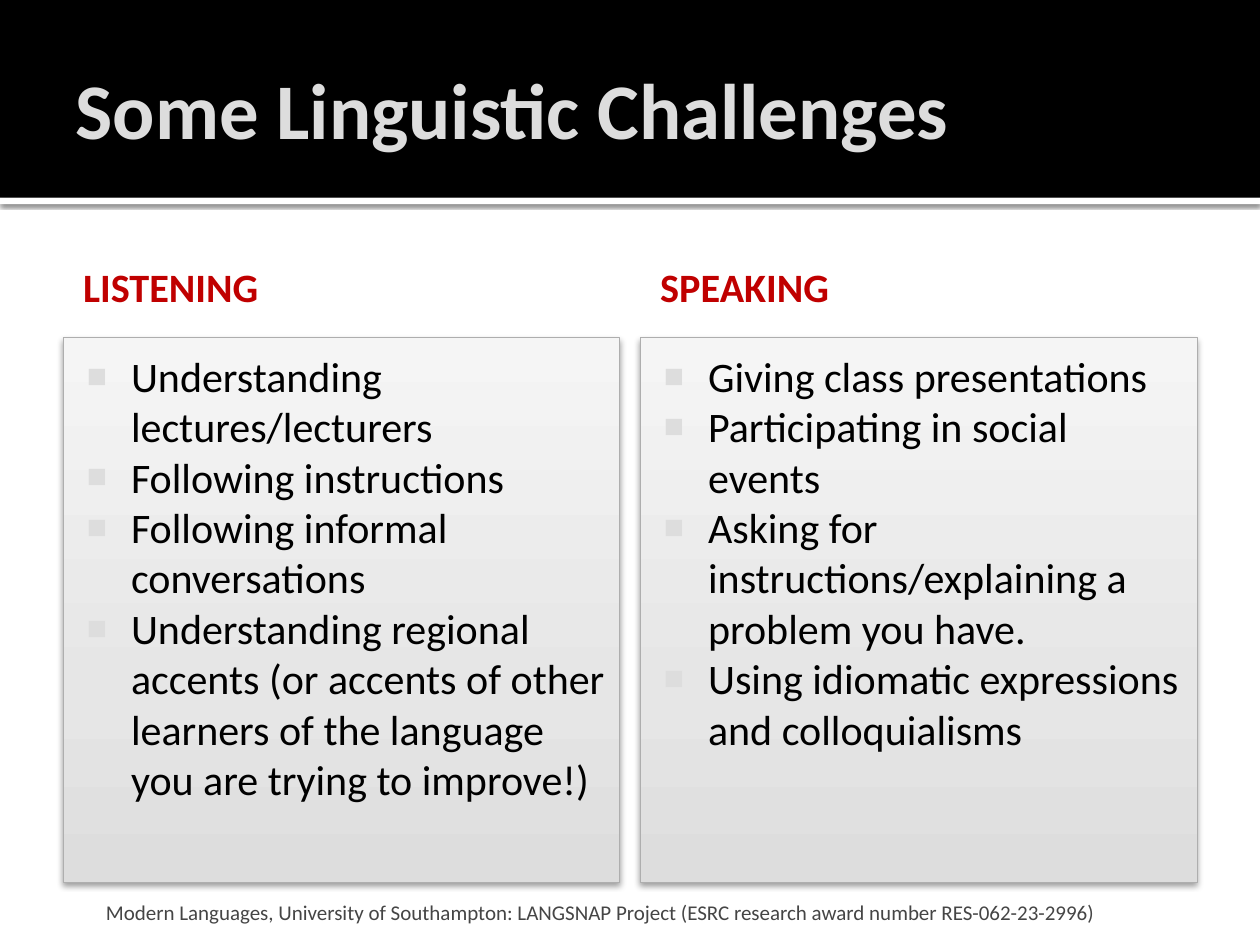
"""Build the slide on listening and speaking challenges for language learners."""
from dataclasses import dataclass

from pptx import Presentation, oxml, util as u
from pptx.dml.color import RGBColor
from pptx.enum import shapes, text
from pptx.oxml.ns import nsdecls, qn

WIDTH, HEIGHT = 10, 7.5
MARGIN, COLUMN, GUTTER = 0.5, 4.42, 0.16
HEADING_TOP, HEADING_HEIGHT = 1.86, 0.78
PANEL_TOP, PANEL_HEIGHT = 2.68, 4.32
BAND = 1.57
COLOURS = {
    "band": "000000", "rule": "FFFFFF", "title": "DDDDDD", "heading": "C00000",
    "body": "000000", "bullet": "DDDDDD", "edge": "AEAEAE", "footer": "454545",
}
PANEL_STOPS = {0: "DDDDDD", 35: "E6E6E6", 100: "F5F5F5"}


@dataclass(frozen=True)
class Style:
    size: float
    colour: str
    bold: bool
    anchor: text.MSO_ANCHOR
    insets: tuple[float, float, float, float]


@dataclass(frozen=True)
class Skill:
    heading: str
    challenges: tuple[str, ...]


STYLES = {
    "title": Style(45, "title", True, text.MSO_ANCHOR.MIDDLE, (0.1, 0.05, 0.05, 0.05)),
    "heading": Style(23, "heading", True, text.MSO_ANCHOR.MIDDLE, (0.16, 0.1, 0.1, 0.05)),
    "body": Style(24, "body", False, text.MSO_ANCHOR.TOP, (0.06, 0.1, 0.1, 0.05)),
    "footer": Style(12, "footer", False, text.MSO_ANCHOR.BOTTOM, (0.05, 0.05, 0.05, 0)),
}
SKILLS = (
    Skill("LISTENING", (
        "Understanding lectures/lecturers",
        "Following instructions",
        "Following informal conversations",
        "Understanding regional accents (or accents of other learners of the "
        "language you are trying to improve!)",
    )),
    Skill("SPEAKING", (
        "Giving class presentations",
        "Participating in social events",
        "Asking for instructions/explaining a problem you have.",
        "Using idiomatic expressions and colloquialisms",
    )),
)
FOOTER = ("Modern Languages, University of Southampton: LANGSNAP Project "
          "(ESRC research award number RES-062-23-2996)")


def rgb(name: str) -> RGBColor:
    """Look up a named colour."""
    return RGBColor.from_string(COLOURS[name])


def assign(target, values: dict) -> None:
    """Set every attribute named in values."""
    for name, value in values.items():
        setattr(target, name, value)


def place(part, left: float, top: float, width: float, height: float) -> None:
    """Position a part in inches."""
    assign(part, {"left": u.Inches(left), "top": u.Inches(top),
                  "width": u.Inches(width), "height": u.Inches(height)})


def write(part, lines: tuple[str, ...], style: Style) -> None:
    """Fill a part with one formatted paragraph per line."""
    frame = part.text_frame
    frame.text = "\n".join(lines)
    sides = ("margin_left", "margin_top", "margin_right", "margin_bottom")
    assign(frame, {"word_wrap": True, "auto_size": text.MSO_AUTO_SIZE.NONE,
                   "vertical_anchor": style.anchor,
                   **{side: u.Inches(inset) for side, inset in zip(sides, style.insets)}})
    for paragraph in frame.paragraphs:
        assign(paragraph, {"alignment": text.PP_ALIGN.LEFT, "space_before": u.Pt(0)})
        for run in paragraph.runs:
            assign(run.font, {"name": "Calibri", "size": u.Pt(style.size), "bold": style.bold})
            run.font.color.rgb = rgb(style.colour)


def add_bullets(part) -> None:
    """Give each paragraph a small square bullet and a hanging indent."""
    for paragraph in part.text_frame.paragraphs:
        props = paragraph._p.get_or_add_pPr()
        props.set("marL", str(u.Inches(0.48)))
        props.set("indent", str(u.Inches(-0.35)))
        for markup in (f'<a:buClr {nsdecls("a")}><a:srgbClr val="{COLOURS["bullet"]}"/></a:buClr>',
                       f'<a:buSzPct {nsdecls("a")} val="80000"/>',
                       f'<a:buFont {nsdecls("a")} typeface="Arial"/>',
                       f'<a:buChar {nsdecls("a")} char="■"/>'):
            props.append(oxml.parse_xml(markup))


def add_shadow(part, opacity: int, blur: float, distance: float) -> None:
    """Cast a black shadow straight down."""
    part.shadow.inherit = False
    effects = part._element.spPr.find(qn("a:effectLst"))
    effects.append(oxml.parse_xml(
        f'<a:outerShdw {nsdecls("a")} blurRad="{u.Pt(blur)}" dist="{u.Pt(distance)}" '
        f'dir="5400000" algn="t" rotWithShape="0"><a:srgbClr val="000000">'
        f'<a:alpha val="{opacity * 1000}"/></a:srgbClr></a:outerShdw>'))


def style_panel(part) -> None:
    """Shade a list panel from grey at the foot to near white at the top."""
    stops = "".join(f'<a:gs pos="{share * 1000}"><a:srgbClr val="{colour}"/></a:gs>'
                    for share, colour in PANEL_STOPS.items())
    part._element.spPr.append(oxml.parse_xml(
        f'<a:gradFill {nsdecls("a")} rotWithShape="1"><a:gsLst>{stops}</a:gsLst>'
        f'<a:lin ang="16200000" scaled="0"/></a:gradFill>'))
    part.line.color.rgb = rgb("edge")
    part.line.width = u.Pt(0.5)
    add_shadow(part, 38, 3.5, 2)


def add_bar(slide, layer: int, top: float, height: float, colour: str):
    """Add a full-width bar behind the placeholders."""
    bar = slide.shapes.add_shape(shapes.MSO_SHAPE.RECTANGLE, 0, 0, 0, 0)
    place(bar, 0, top, WIDTH, height)
    bar.fill.solid()
    bar.fill.fore_color.rgb = rgb(colour)
    bar.line.fill.background()
    bar.shadow.inherit = False
    slide.shapes._spTree.insert(2 + layer, bar._element)
    return bar


def add_skill(slide, column: int, skill: Skill) -> None:
    """Fill one column with its heading and its list of challenges."""
    left = MARGIN + column * (COLUMN + GUTTER)
    heading, panel = (slide.placeholders[2 * column + offset] for offset in (1, 2))
    place(heading, left, HEADING_TOP, COLUMN, HEADING_HEIGHT)
    write(heading, (skill.heading,), STYLES["heading"])
    place(panel, left, PANEL_TOP, COLUMN, PANEL_HEIGHT)
    write(panel, skill.challenges, STYLES["body"])
    add_bullets(panel)
    style_panel(panel)


def main() -> None:
    """Assemble and save the slide."""
    deck = Presentation()
    assign(deck, {"slide_width": u.Inches(WIDTH), "slide_height": u.Inches(HEIGHT)})
    slide = deck.slides.add_slide(deck.slide_layouts.get_by_name("Comparison"))
    rule = add_bar(slide, 0, BAND, 0.05, "rule")
    add_shadow(rule, 60, 2.5, 0.8)
    add_bar(slide, 1, 0, BAND, "band")
    title = slide.shapes.title
    place(title, MARGIN, 0.17, WIDTH - 2 * MARGIN, 1.37)
    write(title, ("Some Linguistic Challenges",), STYLES["title"])
    for column, skill in enumerate(SKILLS):
        add_skill(slide, column, skill)
    footer = slide.shapes.add_textbox(0, 0, 0, 0)
    place(footer, 0.79, 7.05, 8.41, 0.29)
    write(footer, (FOOTER,), STYLES["footer"])
    deck.save("out.pptx")


if __name__ == "__main__":
    main()
